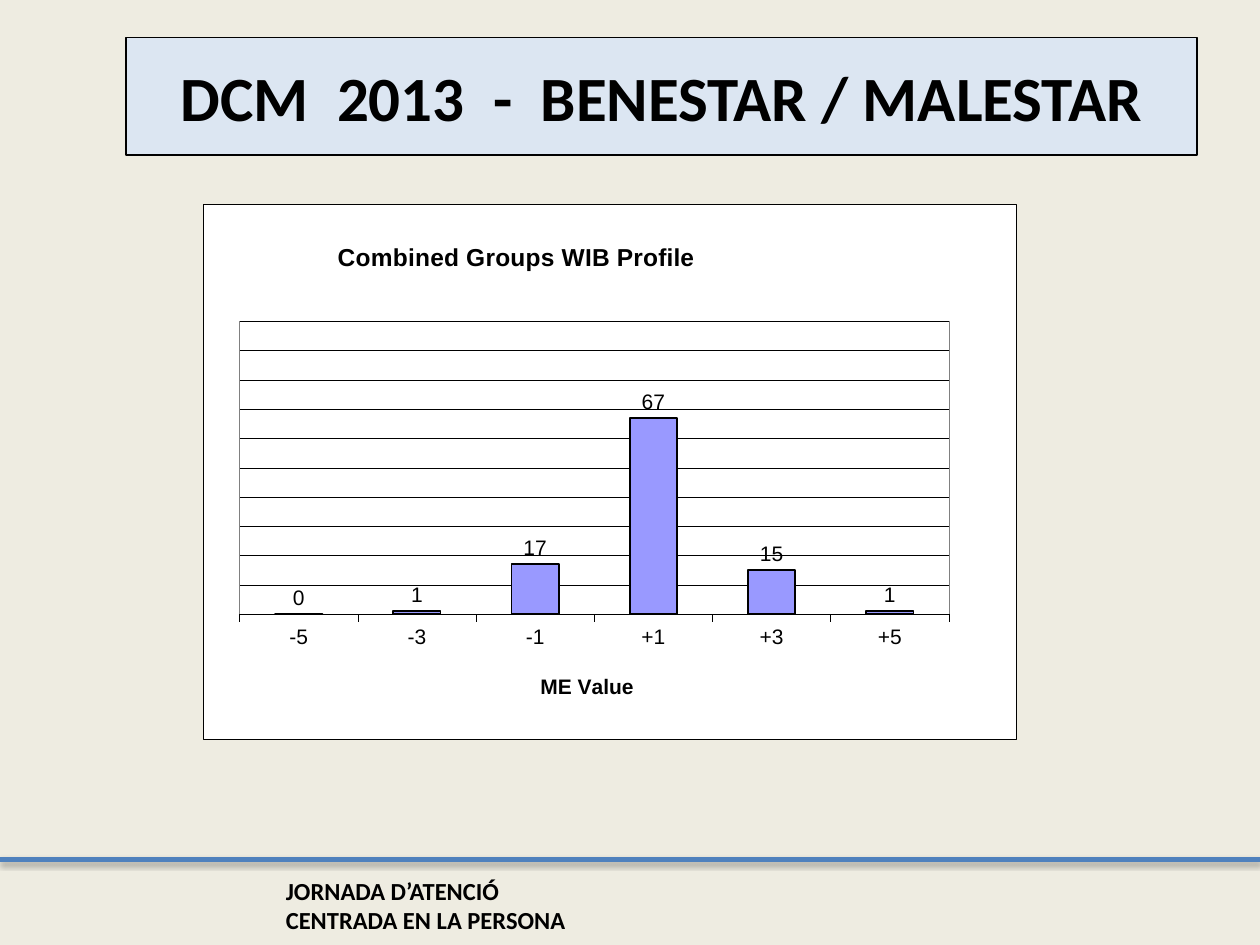
from lxml import etree
from pptx import Presentation
from pptx.chart.data import CategoryChartData
from pptx.dml.color import RGBColor
from pptx.enum.chart import XL_CHART_TYPE, XL_LABEL_POSITION, XL_TICK_LABEL_POSITION, XL_TICK_MARK
from pptx.enum.shapes import MSO_CONNECTOR
from pptx.enum.text import MSO_ANCHOR, MSO_AUTO_SIZE, PP_ALIGN
from pptx.oxml import parse_xml
from pptx.oxml.ns import nsdecls, qn
from pptx.util import Inches, Pt


def rgb(hex_color):
    return RGBColor.from_string(hex_color)


def set_font(font, size, name, color="000000", bold=False):
    font.size, font.name, font.bold = Pt(size), name, bold
    font.color.rgb = rgb(color)


def write(tf, text, align=PP_ALIGN.LEFT, **style):
    tf.word_wrap = True
    p = tf.paragraphs[0]
    p.alignment = align
    r = p.add_run()
    r.text = text
    set_font(r.font, **style)


def set_line(line, color, width):
    line.color.rgb = rgb(color)
    line.width = Pt(width)


def chart_area(fill, line, width):
    """Return the fill and border properties of a chart or plot area."""
    return parse_xml(
        f'<c:spPr {nsdecls("c", "a")}><a:solidFill><a:srgbClr val="{fill}"/></a:solidFill>'
        f'<a:ln w="{Pt(width)}"><a:solidFill><a:srgbClr val="{line}"/></a:solidFill></a:ln></c:spPr>')


def place(element, x, y, w=None, h=None):
    """Fix a chart part at fractions of the chart's size."""
    for old in element.findall(qn("c:layout")):
        element.remove(old)
    layout = etree.Element(qn("c:layout"))
    manual = etree.SubElement(layout, qn("c:manualLayout"))
    values = {"xMode": "edge", "yMode": "edge", "x": x, "y": y, "w": w, "h": h}
    if w is not None:
        values = {"layoutTarget": "inner", **values}
    for tag, value in values.items():
        if value is not None:
            etree.SubElement(manual, qn(f"c:{tag}")).set("val", str(value))
    tx = element.find(qn("c:tx"))
    if tx is None:
        element.insert(0, layout)
    else:
        tx.addnext(layout)


class SlideBuilder:
    ink = "000000"
    text_font = "Calibri"
    chart_font = "Arial"

    def __init__(self, slide, background):
        self.s = slide
        fill = slide.background.fill
        fill.solid()
        fill.fore_color.rgb = rgb(background)

    def title(self, text, x, y, w, h, fill):
        sp = self.s.shapes.title
        sp.left, sp.top, sp.width, sp.height = map(Inches, (x, y, w, h))
        sp.fill.solid()
        sp.fill.fore_color.rgb = rgb(fill)
        set_line(sp.line, self.ink, 0.75)
        tf = sp.text_frame
        tf.vertical_anchor = MSO_ANCHOR.MIDDLE
        write(tf, text, align=PP_ALIGN.CENTER, size=36, name=self.text_font, bold=True)

    def footer(self, text, x, y, w, h):
        tf = self.s.shapes.add_textbox(*map(Inches, (x, y, w, h))).text_frame
        write(tf, text, size=14, name=self.text_font, bold=True)
        tf.auto_size = MSO_AUTO_SIZE.SHAPE_TO_FIT_TEXT

    def rule(self, y, color):
        line = self.s.shapes.add_connector(
            MSO_CONNECTOR.STRAIGHT, 0, Inches(y), Inches(10), Inches(y))
        set_line(line.line, color, 3)
        line._element.spPr.append(parse_xml(
            f'<a:effectLst {nsdecls("a")}><a:outerShdw blurRad="{Pt(3.1)}" dist="{Pt(1.8)}" '
            f'dir="5400000" rotWithShape="0"><a:srgbClr val="{self.ink}">'
            '<a:alpha val="35000"/></a:srgbClr></a:outerShdw></a:effectLst>'))

    def chart_title(self, owner, text, size, x, y):
        title = owner.chart_title if hasattr(owner, "chart_title") else owner.axis_title
        write(title.text_frame, text, align=PP_ALIGN.CENTER,
              size=size, name=self.chart_font, bold=True)
        place(title._element, x, y)

    def column_chart(self, values, title, axis_title, x, y, w, h):
        data = CategoryChartData(number_format="0")
        data.categories = list(values)
        data.add_series("Series 1", values.values())
        chart = self.s.shapes.add_chart(
            XL_CHART_TYPE.COLUMN_CLUSTERED, *map(Inches, (x, y, w, h)), data).chart
        set_font(chart.font, 12, self.chart_font)
        chart.has_legend = False
        self.chart_title(chart, title, 14, 0.16, 0.06)

        cat = chart.category_axis
        self.chart_title(cat, axis_title, 12, 0.41, 0.87)
        cat.major_tick_mark = XL_TICK_MARK.OUTSIDE
        cat.tick_label_position = XL_TICK_LABEL_POSITION.LOW
        set_font(cat.tick_labels.font, 12, self.chart_font)
        set_line(cat.format.line, self.ink, 0.25)

        val = chart.value_axis
        val.minimum_scale, val.maximum_scale, val.major_unit = 0, 100, 10
        val.has_major_gridlines = True
        set_line(val.major_gridlines.format.line, self.ink, 0.25)
        val.visible = False

        plot = chart.plots[0]
        plot.gap_width = 150
        plot.vary_by_categories = False
        bars = plot.series[0]
        bars.invert_if_negative = False
        bars.format.fill.solid()
        bars.format.fill.fore_color.rgb = rgb("9999FF")
        set_line(bars.format.line, self.ink, 1)
        labels = bars.data_labels
        labels.show_value = True
        labels.number_format, labels.number_format_is_linked = "0", False
        labels.position = XL_LABEL_POSITION.OUTSIDE_END
        set_font(labels.font, 12, self.chart_font)

        root = chart._chartSpace.find(qn("c:chart"))
        root.addnext(chart_area("FFFFFF", self.ink, 0.25))
        plot_area = root.find(qn("c:plotArea"))
        plot_area.append(chart_area("FFFFFF", "808080", 0.25))
        place(plot_area, 0.045, 0.219, 0.872, 0.547)


def main():
    prs = Presentation()
    prs.slide_width, prs.slide_height = Inches(10), Inches(7.5)
    s = SlideBuilder(prs.slides.add_slide(prs.slide_layouts[5]), "EEECE1")
    s.footer("JORNADA D’ATENCIÓ CENTRADA EN LA PERSONA", 2.17, 6.9, 2.68, 0.57)
    s.rule(6.82, "4F81BD")
    s.title("DCM  2013  -  BENESTAR / MALESTAR", 1, 0.3, 8.5, 0.93, "DCE6F2")
    s.column_chart({"-5": 0, "-3": 1, "-1": 17, "+1": 67, "+3": 15, "+5": 1},
                   "Combined Groups WIB Profile", "ME Value", 1.61, 1.62, 6.46, 4.25)
    prs.save("out.pptx")


if __name__ == "__main__":
    main()
